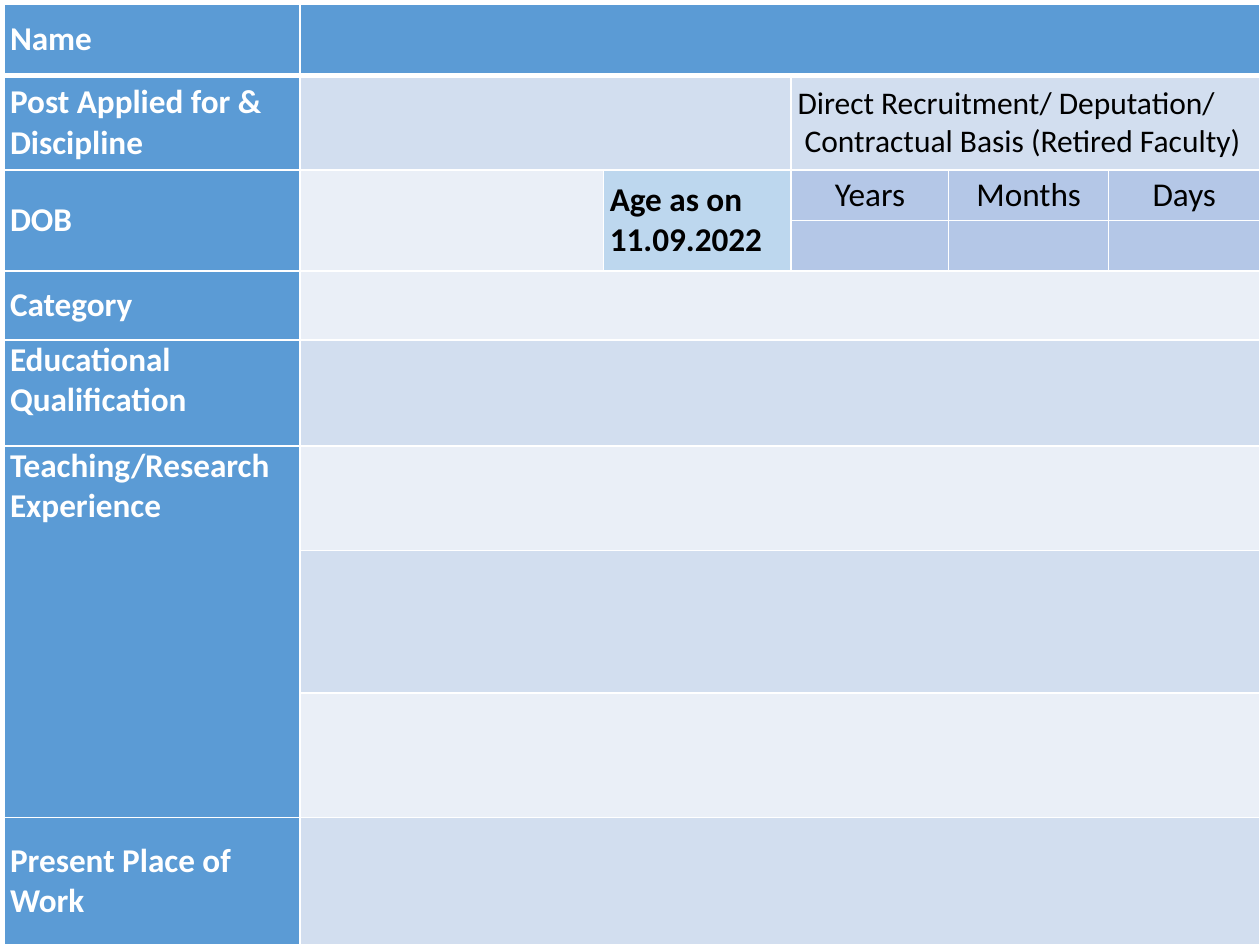
from dataclasses import dataclass

from lxml import etree
from pptx import Presentation
from pptx import util as u
from pptx.dml.color import RGBColor
from pptx.enum import text
from pptx.oxml import ns


@dataclass(frozen=True)
class Theme:
    font: str = "Calibri"
    size: int = 19
    small: int = 18
    white: str = "FFFFFF"
    black: str = "000000"
    head: str = "5B9BD5"
    band: str = "D2DEEF"
    pale: str = "EAEFF7"
    age: str = "BDD7EE"
    unit: str = "B4C7E7"
    thin: int = 1
    thick: int = 3
    pad: float = 0.05


T = Theme()
COLS = [2.35, 2.41, 1.49, 1.25, 1.27, 1.2]
ROWS = [0.57, 0.75, 0.4, 0.4, 0.55, 0.84, 0.83, 1.13, 0.99, 1.01]
EDGE = 0.03
LABELS = [
    (0, 1, ["Name"]),
    (1, 1, ["Post Applied for &", "Discipline"]),
    (2, 2, ["DOB"]),
    (4, 1, ["Category"]),
    (5, 1, ["Educational Qualification"]),
    (6, 3, ["Teaching/Research Experience"]),
    (9, 1, ["Present Place of Work"]),
]
TOP_ROWS = (5, 6)
WIDE = {0: T.head, 4: T.pale, 5: T.band, 6: T.pale,
        7: T.band, 8: T.pale, 9: T.band}
UNITS = ["Years", "Months", "Days"]


def add_grid(slide):
    frame = slide.shapes.add_table(
        len(ROWS), len(COLS), u.Inches(EDGE), u.Inches(EDGE),
        u.Inches(sum(COLS)), u.Inches(sum(ROWS)))
    grid = frame.table
    for col, wide in zip(grid.columns, COLS):
        col.width = u.Inches(wide)
    for row, tall in zip(grid.rows, ROWS):
        row.height = u.Inches(tall)
    return grid


def add_edge(cell, index, side, width):
    line = etree.Element(ns.qn(f"a:ln{side}"), w=str(u.Pt(width)))
    fill = etree.SubElement(line, ns.qn("a:solidFill"))
    etree.SubElement(fill, ns.qn("a:srgbClr"), val=T.white)
    cell._tc.get_or_add_tcPr().insert(index, line)


def rule_grid(grid):
    for row in range(len(ROWS)):
        for col in range(len(COLS)):
            cell = grid.cell(row, col)
            cell.margin_left = cell.margin_right = u.Inches(T.pad)
            cell.margin_top = cell.margin_bottom = 0
            heavy = {(0, "B"), (1, "T")}
            for index, side in enumerate("LRTB"):
                width = T.thick if (row, side) in heavy else T.thin
                add_edge(cell, index, side, width)


def set_cell(grid, row, col, fill, tall=1, wide=1):
    cell = grid.cell(row, col)
    if tall * wide > 1:
        cell.merge(grid.cell(row + tall - 1, col + wide - 1))
    for r in range(row, row + tall):
        for c in range(col, col + wide):
            part = grid.cell(r, c)
            part.fill.solid()
            part.fill.fore_color.rgb = RGBColor.from_string(fill)
    return cell


def write(cell, lines, size=T.size, color=T.black, bold=False,
          align=text.PP_ALIGN.LEFT, anchor=text.MSO_ANCHOR.MIDDLE):
    cell.vertical_anchor = anchor
    frame = cell.text_frame
    for index, line in enumerate(lines):
        para = frame.add_paragraph() if index else frame.paragraphs[0]
        para.alignment = align
        run = para.add_run()
        run.text = line
        run.font.name = T.font
        run.font.size = u.Pt(size)
        run.font.bold = bold
        run.font.color.rgb = RGBColor.from_string(color)


def add_labels(grid):
    for row, tall, lines in LABELS:
        cell = set_cell(grid, row, 0, T.head, tall)
        anchor = (text.MSO_ANCHOR.TOP if row in TOP_ROWS
                  else text.MSO_ANCHOR.MIDDLE)
        write(cell, lines, color=T.white, bold=True, anchor=anchor)


def add_fields(grid):
    for row, fill in WIDE.items():
        set_cell(grid, row, 1, fill, wide=len(COLS) - 1)
    set_cell(grid, 1, 1, T.band, wide=2)
    mode = set_cell(grid, 1, 3, T.band, wide=3)
    write(mode, ["Direct Recruitment/ Deputation/",
                 " Contractual Basis (Retired Faculty)"], size=T.small)


def add_age(grid):
    set_cell(grid, 2, 1, T.pale, tall=2)
    age = set_cell(grid, 2, 2, T.age, tall=2)
    write(age, ["Age as on 11.09.2022"], bold=True)
    for col, unit in enumerate(UNITS, start=3):
        cell = set_cell(grid, 2, col, T.unit)
        write(cell, [unit], align=text.PP_ALIGN.CENTER)
        set_cell(grid, 3, col, T.unit)


def main():
    deck = Presentation()
    deck.slide_width, deck.slide_height = u.Inches(10), u.Inches(7.5)
    slide = deck.slides.add_slide(deck.slide_layouts[6])
    grid = add_grid(slide)
    rule_grid(grid)
    add_labels(grid)
    add_fields(grid)
    add_age(grid)
    deck.save("out.pptx")


if __name__ == "__main__":
    main()
